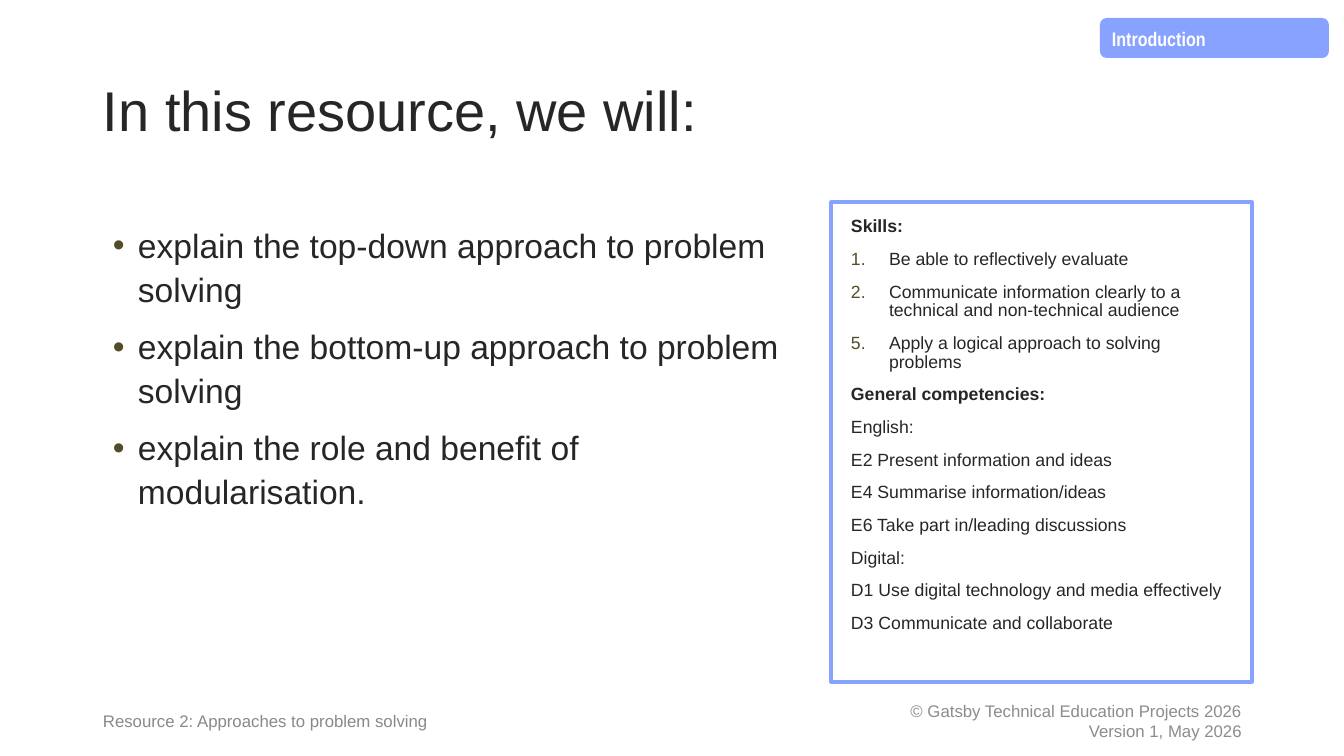
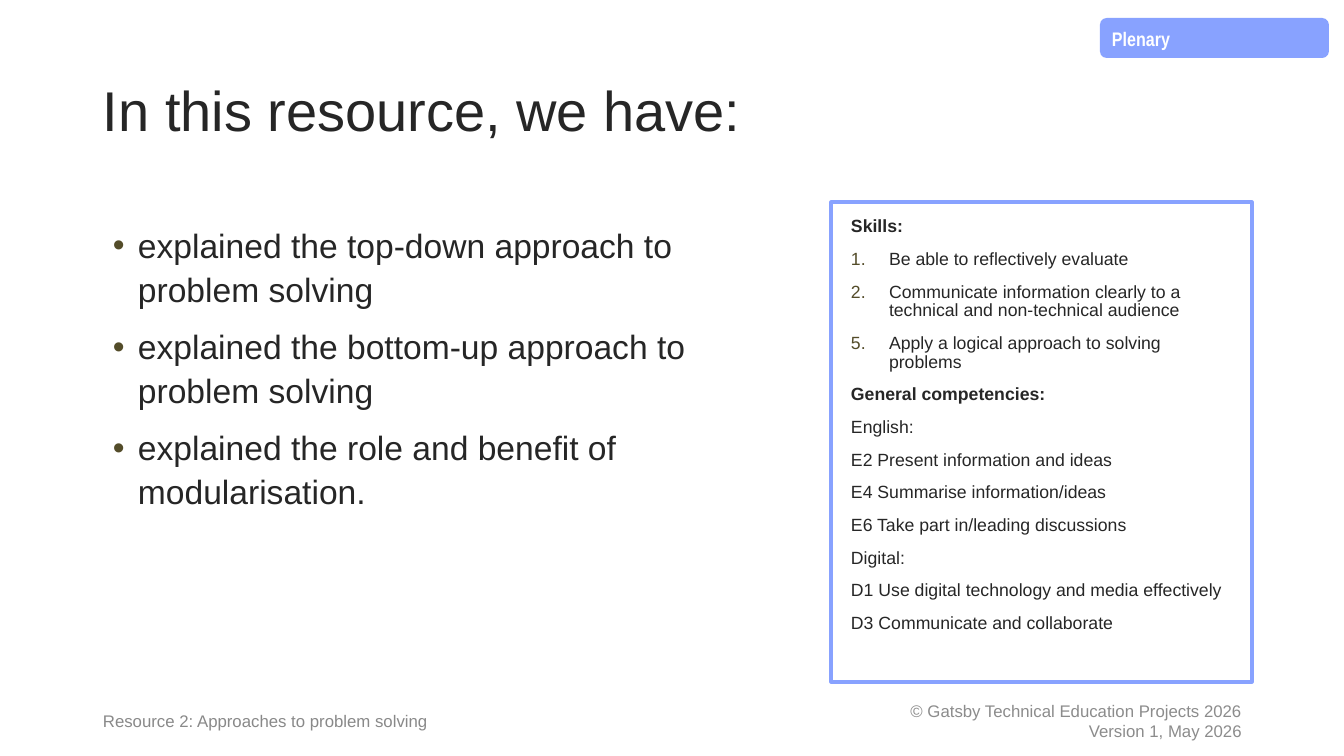
import pptx
import pptx.dml.color
import pptx.enum.shapes
import pptx.enum.text
import pptx.oxml
import pptx.oxml.ns
import pptx.util

PX = 12192000 / 1344
SHAPE = pptx.enum.shapes.MSO_SHAPE
ALIGN = pptx.enum.text.PP_ALIGN
ANCHOR = pptx.enum.text.MSO_ANCHOR
ACCENT, INK, BULLET, WHITE = "88A2FF", "262626", "534C29", "FFFFFF"

TITLE_BOX = (93, 40, 1159, 146)
TAG_BOX = (1100, 18, 229, 40)
CONTENT_BOX = (93, 202, 1159, 480)
FOOTER_BOX = (93, 701, 1159, 40)

TITLE_FONT = {"name": "Arial", "size": 40, "color": INK}
TAG_FONT = {"name": "Arial Narrow", "size": 14, "color": WHITE, "bold": True}
AIM_FONT = {"name": "Arial", "size": 24, "color": INK}
SKILL_FONT = {"name": "Arial", "size": 12.6, "color": INK}
FOOTER_FONT = {"name": "Arial", "size": 12, "color": "898989"}
COPYRIGHT_FONT = {**FOOTER_FONT, "color": "8C8C8C"}

DOT = '<a:buChar xmlns:a="{ns}" char="•"/>'
NUMBER = '<a:buAutoNum xmlns:a="{ns}" type="arabicPeriod" startAt="{start}"/>'

HEADINGS = ("Skills:", "General competencies:")
SKILLS = [
    (1, "Be able to reflectively evaluate"),
    (1, "Communicate information clearly to a technical and non-technical audience"),
    (5, "Apply a logical approach to solving problems"),
]
COMPETENCIES = [
    "English:",
    "E2 Present information and ideas",
    "E4 Summarise information/ideas",
    "E6 Take part in/leading discussions",
    "Digital:",
    "D1 Use digital technology and media effectively",
    "D3 Communicate and collaborate",
]
FOOTER = "Resource 2: Approaches to problem solving"
COPYRIGHT = ["© Gatsby Technical Education Projects 2026", "Version 1, May 2026"]

SLIDES = [
    ("Introduction", "In this resource, we will:", [
        "explain the top-down approach to problem solving",
        "explain the bottom-up approach to problem solving",
        "explain the role and benefit of modularisation.",
    ]),
    ("Plenary", "In this resource, we have:", [
        "explained the top-down approach to problem solving",
        "explained the bottom-up approach to problem solving",
        "explained the role and benefit of modularisation.",
    ]),
]


def px(n):
    return pptx.util.Emu(round(n * PX))


def rgb(value):
    return pptx.dml.color.RGBColor.from_string(value)


def set_font(font, values):
    for key, value in values.items():
        if key == "color":
            font.color.rgb = rgb(value)
        else:
            setattr(font, key, pptx.util.Pt(value) if key == "size" else value)


def set_frame(tf, anchor=ANCHOR.TOP, inset_x=10, inset_y=5):
    values = {
        "word_wrap": True,
        "auto_size": pptx.enum.text.MSO_AUTO_SIZE.NONE,
        "vertical_anchor": anchor,
        "margin_left": px(inset_x),
        "margin_right": px(inset_x),
        "margin_top": px(inset_y),
        "margin_bottom": px(inset_y),
    }
    for key, value in values.items():
        setattr(tf, key, value)


def add_text(tf, text, font, line=1.0, before=0, align=ALIGN.LEFT):
    first = not tf.text
    p = tf.paragraphs[0] if first else tf.add_paragraph()
    values = {
        "alignment": align,
        "line_spacing": line,
        "space_before": pptx.util.Pt(0 if first else before),
    }
    for key, value in values.items():
        setattr(p, key, value)
    r = p.add_run()
    r.text = text
    set_font(r.font, font)
    return p


def add_bullet(p, indent, marker, start=1):
    ns = pptx.oxml.ns.nsdecls("a")
    uri = ns.split('"')[1]
    pPr = p._p.get_or_add_pPr()
    pPr.set("marL", str(px(indent)))
    pPr.set("indent", str(-px(indent)))
    colour = f'<a:buClr {ns}><a:srgbClr val="{BULLET}"/></a:buClr>'
    font = f'<a:buFont {ns} typeface="Arial"/>'
    for xml in (colour, font, marker.format(ns=uri, start=start)):
        pPr.append(pptx.oxml.parse_xml(xml))


def add_panel(s, kind, box, fill, line=None):
    sp = s.shapes.add_shape(kind, *map(px, box))
    sp.shadow.inherit = False
    sp.fill.solid()
    sp.fill.fore_color.rgb = rgb(fill)
    if line:
        sp.line.color.rgb = rgb(line)
        sp.line.width = pptx.util.Pt(2.25)
    else:
        sp.line.fill.background()
    return sp


def add_title(s, box, text):
    sp = s.shapes.title
    for key, value in zip(("left", "top", "width", "height"), box):
        setattr(sp, key, px(value))
    set_frame(sp.text_frame, ANCHOR.MIDDLE)
    add_text(sp.text_frame, text, TITLE_FONT, line=0.9)


def add_tag(s, box, text):
    sp = add_panel(s, SHAPE.FLOWCHART_ALTERNATE_PROCESS, box, ACCENT)
    set_frame(sp.text_frame)
    add_text(sp.text_frame, text, TAG_FONT, line=1.08)


def add_aims(s, box, aims):
    tf = s.shapes.add_textbox(*map(px, box)).text_frame
    set_frame(tf, inset_x=20, inset_y=20)
    for aim in aims:
        p = add_text(tf, aim, AIM_FONT, line=1.08, before=10)
        add_bullet(p, 25, DOT)


def add_skills(s, box):
    tf = add_panel(s, SHAPE.RECTANGLE, box, WHITE, ACCENT).text_frame
    set_frame(tf, inset_x=20, inset_y=16)
    spacing = {"line": 0.88, "before": 10}
    heading_font = {**SKILL_FONT, "bold": True}
    add_text(tf, HEADINGS[0], heading_font, **spacing)
    for start, skill in SKILLS:
        p = add_text(tf, skill, SKILL_FONT, **spacing)
        add_bullet(p, 38, NUMBER, start)
    add_text(tf, HEADINGS[1], heading_font, **spacing)
    for competency in COMPETENCIES:
        add_text(tf, competency, SKILL_FONT, **spacing)


def add_content(s, box, aims):
    x, y, w, h = box
    skills_w = 421
    add_aims(s, (x, y, 706, h), aims)
    add_skills(s, (x + w - skills_w, y, skills_w, h))


def add_footer(s, box):
    x, y, w, h = box
    half = 454
    parts = [
        (x, [FOOTER], FOOTER_FONT, ALIGN.LEFT),
        (x + w - half, COPYRIGHT, COPYRIGHT_FONT, ALIGN.RIGHT),
    ]
    for left, lines, font, align in parts:
        tf = s.shapes.add_textbox(*map(px, (left, y, half, h))).text_frame
        set_frame(tf, ANCHOR.MIDDLE)
        for text in lines:
            add_text(tf, text, font, align=align)


def add_resource_slide(prs, tag, title, aims):
    s = prs.slides.add_slide(prs.slide_layouts[5])
    add_title(s, TITLE_BOX, title)
    add_tag(s, TAG_BOX, tag)
    add_content(s, CONTENT_BOX, aims)
    add_footer(s, FOOTER_BOX)


def main():
    prs = pptx.Presentation()
    prs.slide_width, prs.slide_height = px(1344), px(756)
    for tag, title, aims in SLIDES:
        add_resource_slide(prs, tag, title, aims)
    prs.save("out.pptx")


if __name__ == "__main__":
    main()
